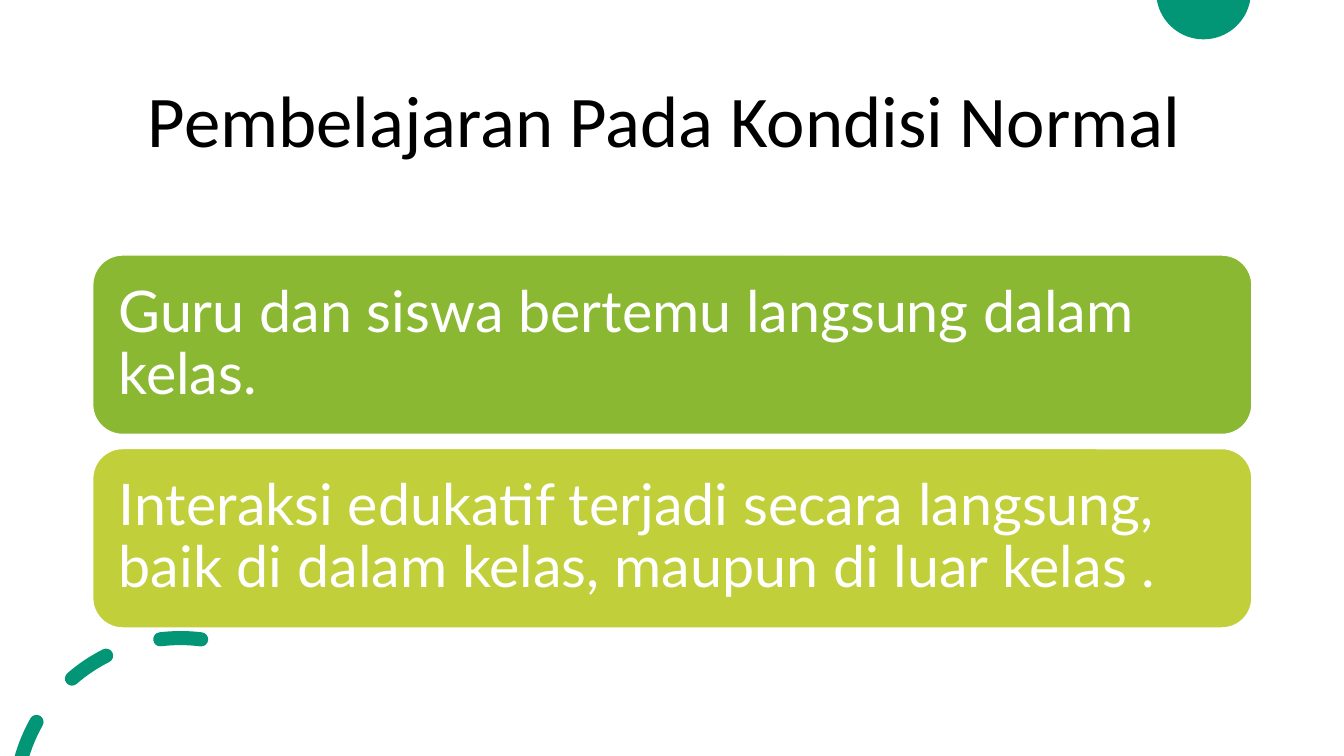
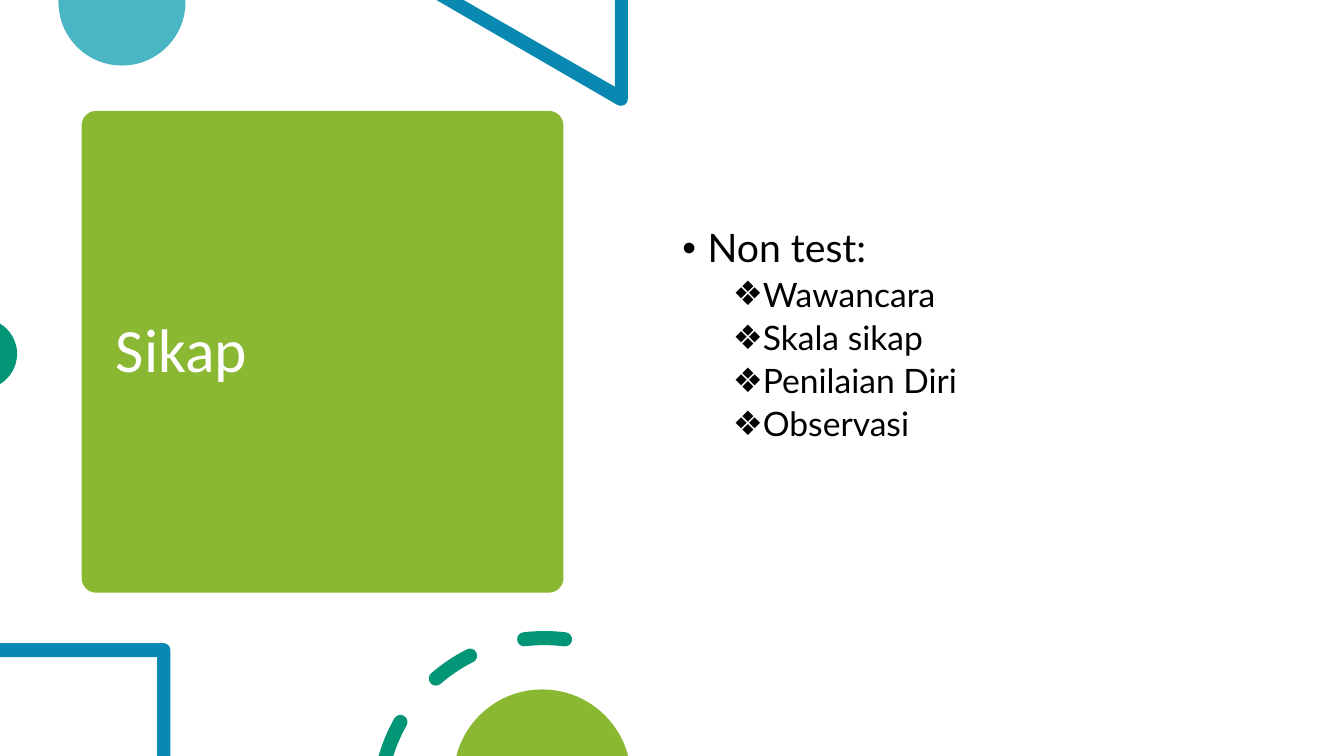
from dataclasses import dataclass
from math import acos, ceil, cos, degrees, radians, sin, tan

from lxml import etree
from pptx import Presentation
from pptx.dml.color import RGBColor
from pptx.enum import shapes, text
from pptx.oxml import ns
from pptx.util import Inches, Pt


@dataclass(frozen=True)
class Theme:
    white: str = "FFFFFF"
    black: str = "000000"
    jade: str = "029676"
    green: str = "8AB833"
    lime: str = "C0CF3A"
    aqua: str = "4AB5C4"
    blue: str = "0989B1"
    head: str = "Calibri"
    body: str = "Lato"
    title: int = 52
    panel: int = 44
    card: int = 41
    list: int = 28
    item: int = 24


THEME = Theme()
WIDTH, HEIGHT = 40 / 3, 7.5
PEN = 0.07


def paint(shape, fill, line=None):
    shape.shadow.inherit = False
    shape.fill.solid()
    shape.fill.fore_color.rgb = RGBColor.from_string(fill)
    if line:
        shape.line.color.rgb = RGBColor.from_string(line)
        shape.line.width = Pt(1)
    else:
        shape.line.fill.background()


def style(para, font, size, color):
    para.line_spacing = 0.9
    for run in para.runs:
        run.font.name = font
        run.font.size = Pt(size)
        run.font.color.rgb = RGBColor.from_string(color)


def place(shape, box):
    shape.left, shape.top, shape.width, shape.height = map(Inches, box)


def arc(x, y, radius, start, end):
    count = ceil(abs(end - start) / 92)
    step = radians(end - start) / count
    pull = 4 / 3 * tan(step / 4) * radius
    knots = []
    for i in range(count + 1):
        turn = radians(start) + i * step
        dx, dy = sin(turn), -cos(turn)
        knots.append((x + radius * dx, y + radius * dy, -dy * pull, dx * pull))
    curves = [((ax + au, ay + av), (bx - bu, by - bv), (bx, by))
              for (ax, ay, au, av), (bx, by, bu, bv) in zip(knots, knots[1:])]
    return [(knots[0][:2],), *curves]


def lines(*points):
    return [(point,) for point in points]


def cap(x, y, radius, turn, start):
    angle = radians(turn)
    return arc(x + radius * sin(angle), y - radius * cos(angle), PEN, start, start + 180)[1:]


def curve(shape, segs):
    steps = shape.element.findall(".//" + ns.qn("a:lnTo"))
    for step, seg in zip(steps, segs):
        if len(seg) == 1:
            continue
        bend = etree.Element(ns.qn("a:cubicBezTo"))
        for x, y in seg:
            point = etree.SubElement(bend, ns.qn("a:pt"))
            point.set("x", str(Inches(x) - shape.left))
            point.set("y", str(Inches(y) - shape.top))
        step.getparent().replace(step, bend)


def outline(slide, loops, fill):
    ends = [[tuple(map(Inches, seg[-1])) for seg in loop] for loop in loops]
    pen = slide.shapes.build_freeform(*ends[0][0], scale=1.0)
    for i, loop in enumerate(ends):
        if i:
            pen.move_to(*loop[0])
        pen.add_line_segments(loop[1:], close=False)
    shape = pen.convert_to_shape()
    curve(shape, [seg for loop in loops for seg in loop[1:]])
    paint(shape, fill)
    return shape


def disc(slide, x, y, radius, facing, depth, fill):
    half = degrees(acos(depth / radius))
    return outline(slide, [arc(x, y, radius, facing - half, facing + half)], fill)


def ring(slide, x):
    y, mid = 7.97, 1.64
    outer, inner = mid + PEN, mid - PEN
    low, high = (-degrees(acos((y - HEIGHT) / r)) for r in (outer, inner))
    tip = -60.5
    loops = [arc(x, y, outer, low, tip) + cap(x, y, mid, tip, tip)
             + arc(x, y, inner, tip, high)[1:]]
    for start, end in ((-41, -26.7), (-7, 7.2)):
        loops.append(arc(x, y, outer, start, end) + cap(x, y, mid, end, end)
                     + arc(x, y, inner, end, start)[1:]
                     + cap(x, y, mid, start, start + 180))
    return outline(slide, loops, THEME.jade)


def decor(slide):
    tree = slide.slide_layout.slide_master.shapes.element
    for shape in (ring(slide, 1.79), disc(slide, 11.94, -0.08, 0.47, 180, 0.08, THEME.jade)):
        tree.insert(2, shape.element)


def heading(slide, words, box, size, color, align):
    title = slide.shapes.title
    place(title, box)
    frame = title.text_frame
    frame.text = words
    frame.auto_size = text.MSO_AUTO_SIZE.NONE
    frame.vertical_anchor = text.MSO_ANCHOR.MIDDLE
    frame.paragraphs[0].alignment = align
    style(frame.paragraphs[0], THEME.head, size, color)


def block(slide, kind, box, fill, line=None):
    shape = slide.shapes.add_shape(kind, *map(Inches, box))
    paint(shape, fill, line)
    return shape


def cards(slide, box, rows, gap):
    left, top, width, height = box
    tall = (height - gap * (len(rows) - 1)) / len(rows)
    for i, (words, fill) in enumerate(rows):
        card = block(slide, shapes.MSO_SHAPE.ROUNDED_RECTANGLE,
                     (left, top + i * (tall + gap), width, tall), fill, THEME.white)
        frame = card.text_frame
        frame.text = words
        frame.word_wrap = True
        frame.vertical_anchor = text.MSO_ANCHOR.MIDDLE
        frame.margin_left = frame.margin_right = Inches(0.17)
        frame.paragraphs[0].alignment = text.PP_ALIGN.LEFT
        style(frame.paragraphs[0], THEME.body, THEME.card, THEME.white)


def bullet(para, mark, left):
    props = para._p.get_or_add_pPr()
    props.set("marL", str(Inches(left)))
    props.set("indent", str(Inches(-0.25)))
    etree.SubElement(props, ns.qn("a:buChar")).set("char", mark)


def listing(slide, box, lead, items):
    body = slide.placeholders[1]
    place(body, box)
    frame = body.text_frame
    frame.text = "\n".join([lead, *items])
    frame.auto_size = text.MSO_AUTO_SIZE.NONE
    for i, para in enumerate(frame.paragraphs):
        para.level = min(i, 1)
        para.space_before = Pt(5 if i else 10)
        style(para, THEME.body, THEME.item if i else THEME.list, THEME.black)
        bullet(para, "❖" if i else "•", 0.75 if i else 0.25)


def art(slide):
    disc(slide, 1.21, 0.02, 0.63, 180, -0.02, THEME.aqua)
    wedge = lines((6.23, 0), (6.1, 0), (6.1, 0.86), (4.6, 0), (4.33, 0))
    outline(slide, [wedge + arc(6.16, 0.98, PEN, 210, 90)], THEME.blue)
    disc(slide, -0.18, 3.51, 0.35, 90, 0.18, THEME.jade)
    frame = lines((1.56, HEIGHT), (1.56, 6.52), (0, 6.52), (0, 6.38))
    corner = arc(1.62, 6.45, PEN, 0, 90)
    outline(slide, [frame + corner + lines((1.69, HEIGHT))], THEME.blue)
    ring(slide, 5.4)
    disc(slide, 5.38, 7.72, 0.88, 0, 0.22, THEME.green)


def normal(deck):
    slide = deck.slides.add_slide(deck.slide_layouts[5])
    decor(slide)
    heading(slide, "Pembelajaran Pada Kondisi Normal ", (0.92, 0.61, 11.5, 1.24),
            THEME.title, THEME.black, text.PP_ALIGN.CENTER)
    cards(slide, (0.92, 2.53, 11.5, 3.7), [
        ("Guru dan siswa bertemu langsung dalam kelas.", THEME.green),
        ("Interaksi edukatif terjadi secara langsung, baik di dalam kelas, "
         "maupun di luar kelas .", THEME.lime),
    ], 0.14)


def attitude(deck):
    slide = deck.slides.add_slide(deck.slide_layouts[1])
    panel = block(slide, shapes.MSO_SHAPE.ROUNDED_RECTANGLE,
                  (0.81, 1.1, 4.78, 4.78), THEME.green)
    panel.adjustments[0] = 0.03
    ground = block(slide, shapes.MSO_SHAPE.RECTANGLE, (0, 0, WIDTH, HEIGHT), THEME.white)
    for shape in (panel, ground):
        slide.shapes.element.insert(2, shape.element)
    heading(slide, "Sikap", (1.05, 1.22, 4.31, 4.56),
            THEME.panel, THEME.white, text.PP_ALIGN.LEFT)
    listing(slide, (6.67, 2.22, 5.75, 2.6), "Non test:",
            ["Wawancara", "Skala sikap", "Penilaian Diri", "Observasi"])
    art(slide)


def main():
    deck = Presentation()
    deck.slide_width, deck.slide_height = Inches(WIDTH), Inches(HEIGHT)
    normal(deck)
    attitude(deck)
    deck.save("out.pptx")


if __name__ == "__main__":
    main()
